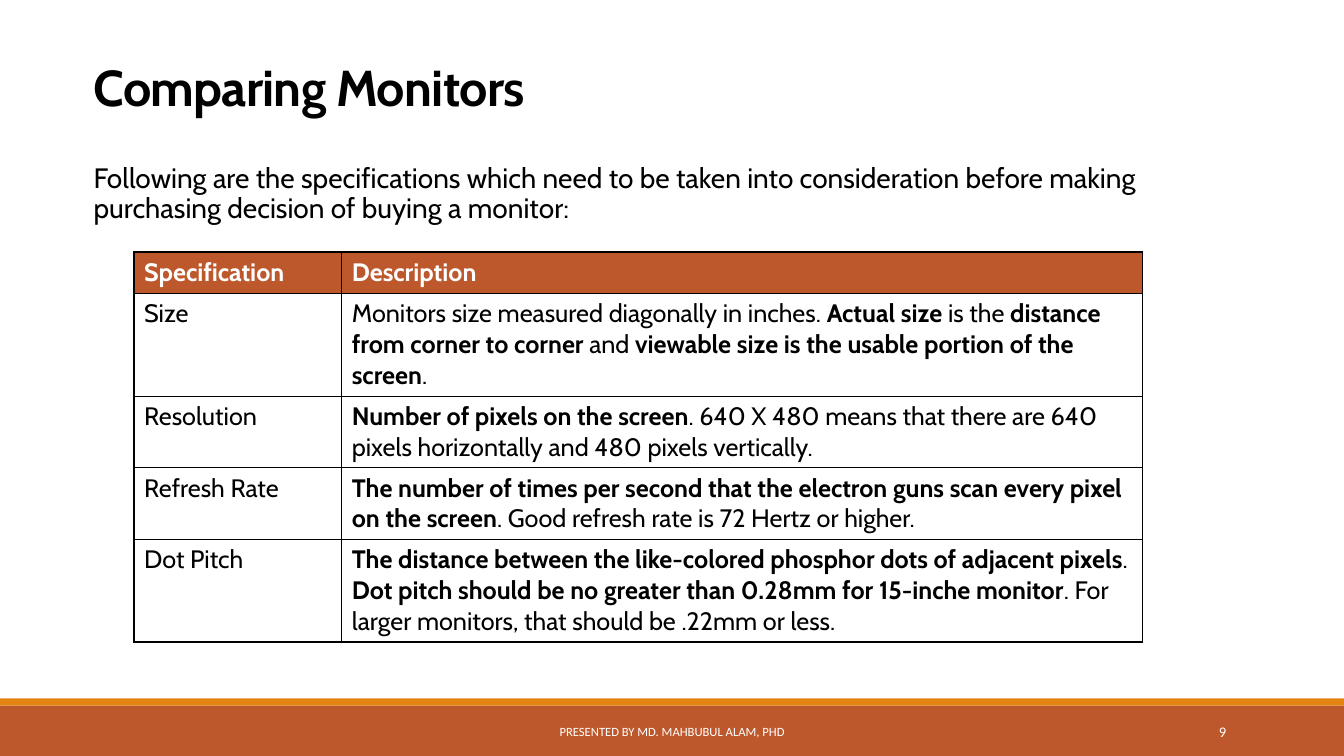
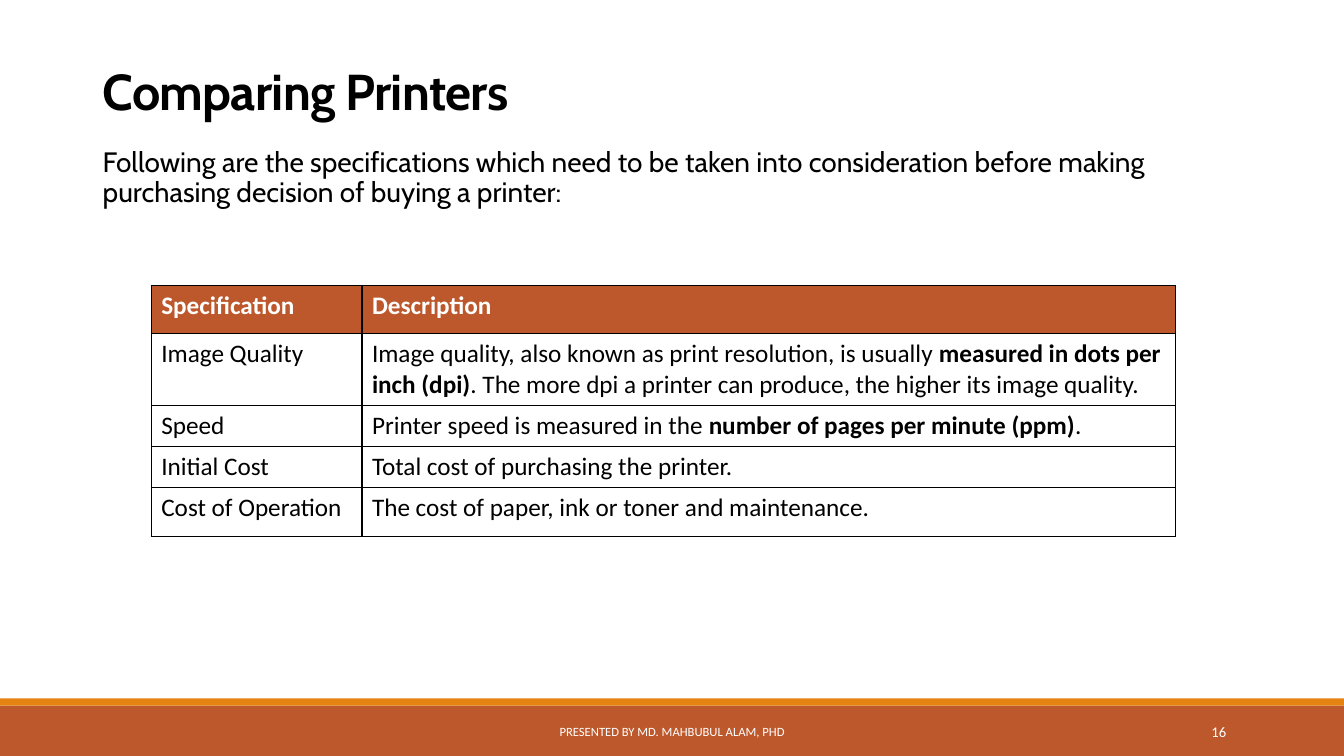
from dataclasses import dataclass

from lxml import etree
from pptx import Presentation
from pptx.dml.color import RGBColor
from pptx.enum.shapes import MSO_SHAPE
from pptx.enum.text import MSO_ANCHOR, PP_ALIGN
from pptx.oxml.ns import qn
from pptx.util import Inches, Pt

RECTANGLE = MSO_SHAPE.RECTANGLE
TOP, MIDDLE, BOTTOM = MSO_ANCHOR.TOP, MSO_ANCHOR.MIDDLE, MSO_ANCHOR.BOTTOM
LEFT, CENTER, RIGHT = PP_ALIGN.LEFT, PP_ALIGN.CENTER, PP_ALIGN.RIGHT


@dataclass(frozen=True)
class Theme:
    rust: RGBColor = RGBColor(0xBD, 0x58, 0x2C)
    orange: RGBColor = RGBColor(0xE4, 0x83, 0x12)
    black: RGBColor = RGBColor(0, 0, 0)
    white: RGBColor = RGBColor(0xFF, 0xFF, 0xFF)
    heading_font: str = "Cabin"
    footer_font: str = "Calibri"
    title_size: float = 36
    intro_size: float = 20
    table_size: float = 18
    footer_size: float = 9
    number_size: float = 10.5


theme = Theme()

BANDS = [(7, 0.5, theme.rust), (6.93, 0.07, theme.orange)]
PRESENTER = "PRESENTED BY MD. MAHBUBUL ALAM, PHD"
INTRO = (
    "Following are the specifications which need to be taken into consideration "
    "before making purchasing decision of buying a {}:"
)
HEADER = ("Specification", "Description")

comparisons = [
    {
        "title": "Comparing Monitors",
        "device": "monitor",
        "number": "9",
        "title_box": (0.83, 0.5, 11.17, 0.71),
        "intro_box": (0.83, 1.58, 11.37, 4.84),
        "table_corner": (1.33, 2.5),
        "table_font": "Cabin",
        "columns": (2.06, 7.94),
        "heights": (0.41, 1.02, 0.71, 0.71, 1.02),
        "specifications": [
            ("Size", "Monitors size measured diagonally in inches. **Actual size** is the "
                     "**distance from corner to corner** and **viewable size is the usable "
                     "portion of the screen**."),
            ("Resolution", "**Number of pixels on the screen**. 640 X 480 means that there are "
                           "640 pixels horizontally and 480 pixels vertically."),
            ("Refresh Rate", "**The number of times per second that the electron guns scan every "
                             "pixel on the screen**. Good refresh rate is 72 Hertz or higher."),
            ("Dot Pitch", "**The distance between the like-colored phosphor dots of adjacent "
                          "pixels**. **Dot pitch should be no greater than 0.28mm for 15-inche "
                          "monitor**. For larger monitors, that should be .22mm or less."),
        ],
    },
    {
        "title": "Comparing Printers",
        "device": "printer",
        "number": "16",
        "title_box": (0.92, 0.5, 11.28, 0.75),
        "intro_box": (0.92, 1.42, 11.5, 5),
        "table_corner": (1.5, 2.83),
        "table_font": "Calibri",
        "columns": (2.09, 8.07),
        "heights": (0.48, 0.71, 0.41, 0.41, 0.48),
        "specifications": [
            ("Image Quality", "Image quality, also known as print resolution, is usually "
                              "**measured in dots per inch (dpi)**. The more dpi a printer can "
                              "produce, the higher its image quality."),
            ("Speed", "Printer speed is measured in the **number of pages per minute (ppm)**."),
            ("Initial Cost", "Total cost of purchasing the printer."),
            ("Cost of Operation", "The cost of paper, ink or toner and maintenance."),
        ],
    },
]


def add_text(slide, box, text, font, size, color, anchor=TOP, align=LEFT, spacing=1.0):
    frame = slide.shapes.add_textbox(*map(Inches, box)).text_frame
    frame.word_wrap = True
    frame.vertical_anchor = anchor
    paragraph = frame.paragraphs[0]
    paragraph.text = text
    paragraph.alignment = align
    paragraph.line_spacing = spacing
    paragraph.font.name = font
    paragraph.font.size = Pt(size)
    paragraph.font.color.rgb = color
    return frame


def fill_cell(cell, text, font, is_header):
    properties = cell._tc.get_or_add_tcPr()
    for side in ("a:lnL", "a:lnR", "a:lnT", "a:lnB"):
        border = etree.SubElement(properties, qn(side), w=str(Pt(1)))
        ink = etree.SubElement(border, qn("a:solidFill"))
        etree.SubElement(ink, qn("a:srgbClr"), val=str(theme.black))
    if is_header:
        cell.fill.solid()
        cell.fill.fore_color.rgb = theme.rust
    else:
        cell.fill.background()
    paragraph = cell.text_frame.paragraphs[0]
    paragraph.font.name = font
    paragraph.font.size = Pt(theme.table_size)
    paragraph.font.color.rgb = theme.white if is_header else theme.black
    for index, part in enumerate(text.split("**")):
        if part:
            run = paragraph.add_run()
            run.text = part
            run.font.bold = is_header or index % 2 == 1


deck = Presentation()
deck.slide_width = Inches(13.33)
deck.slide_height = Inches(7.5)
blank_layout = deck.slide_layouts[6]

for comparison in comparisons:
    slide = deck.slides.add_slide(blank_layout)

    for top, height, color in BANDS:
        band = slide.shapes.add_shape(
            RECTANGLE, 0, Inches(top), deck.slide_width, Inches(height))
        band.shadow.inherit = False
        band.fill.solid()
        band.fill.fore_color.rgb = color
        band.line.fill.background()

    title = add_text(slide, comparison["title_box"], comparison["title"], theme.heading_font,
                     theme.title_size, theme.black, anchor=BOTTOM, spacing=0.85)
    title.paragraphs[0].font.bold = True
    title.paragraphs[0].runs[0]._r.get_or_add_rPr().set("spc", "-50")

    intro = add_text(slide, comparison["intro_box"], INTRO.format(comparison["device"]),
                     theme.heading_font, theme.intro_size, theme.black, spacing=0.9)
    intro.margin_right = 0

    rows = [HEADER, *comparison["specifications"]]
    columns, heights = comparison["columns"], comparison["heights"]
    table = slide.shapes.add_table(
        len(rows), len(columns), *map(Inches, comparison["table_corner"]),
        Inches(sum(columns)), Inches(sum(heights))).table
    for column, width in zip(table.columns, columns):
        column.width = Inches(width)
    for row_index, (row, height) in enumerate(zip(rows, heights)):
        table.rows[row_index].height = Inches(height)
        for column_index, text in enumerate(row):
            fill_cell(table.cell(row_index, column_index), text,
                      comparison["table_font"], row_index == 0)

    add_text(slide, (4.03, 7.06, 5.27, 0.4), PRESENTER, theme.footer_font,
             theme.footer_size, theme.white, anchor=MIDDLE, align=CENTER)
    add_text(slide, (10.83, 7.06, 1.43, 0.4), comparison["number"], theme.footer_font,
             theme.number_size, theme.white, anchor=MIDDLE, align=RIGHT)

deck.save("out.pptx")
